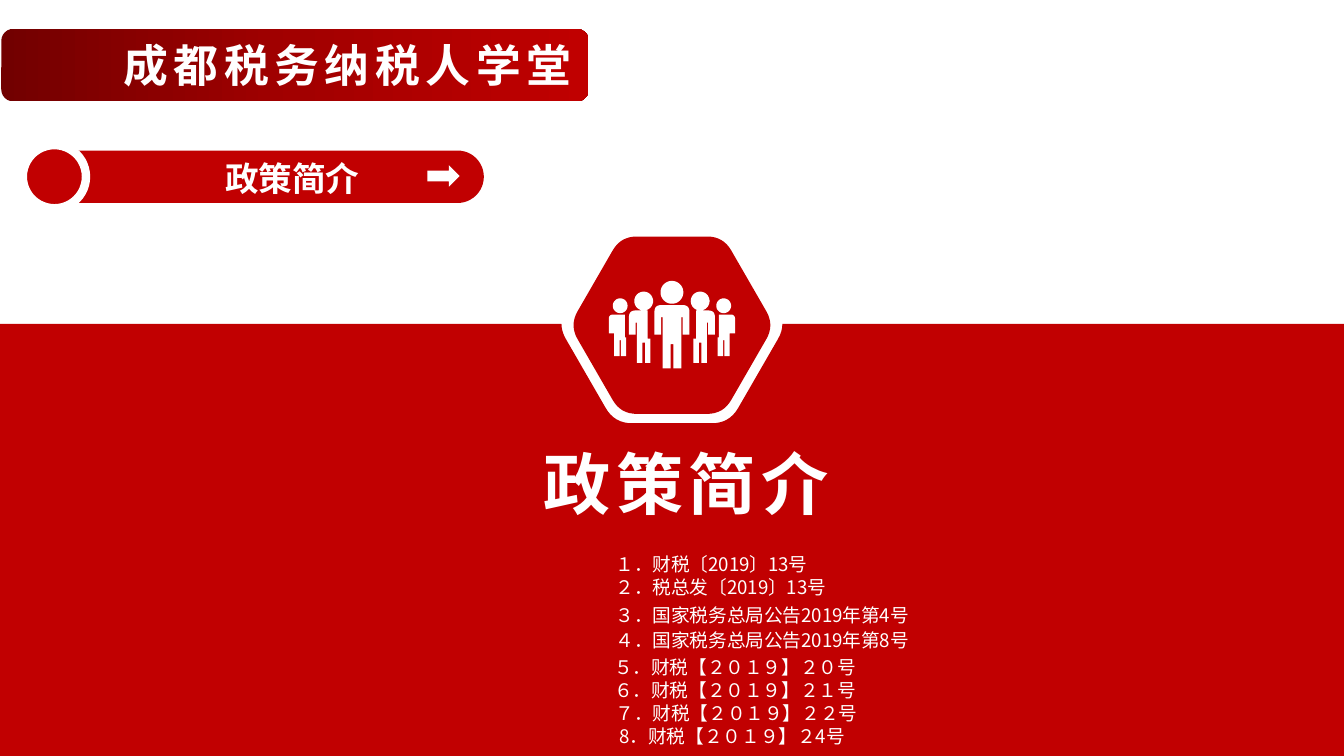
from copy import deepcopy
from dataclasses import dataclass
from math import cos, pi, sin

from lxml import etree
from pptx import Presentation
from pptx.dml.color import RGBColor
from pptx.enum.shapes import MSO_SHAPE
from pptx.enum.text import MSO_ANCHOR, PP_ALIGN
from pptx.oxml.ns import qn
from pptx.util import Inches, Pt

ROUND, OVAL, ARROW = MSO_SHAPE.ROUNDED_RECTANGLE, MSO_SHAPE.OVAL, MSO_SHAPE.RIGHT_ARROW
LEFT, CENTER = PP_ALIGN.LEFT, PP_ALIGN.CENTER
TOP, MIDDLE = MSO_ANCHOR.TOP, MSO_ANCHOR.MIDDLE

W = Inches(10)
H = W * 9 // 16
COLS = 100
ROWS = COLS * 9 / 16
CELL = W / COLS
MID = COLS / 2


@dataclass(frozen=True)
class Theme:
    red: str = "C10001"
    white: str = "FFFFFF"
    banner: tuple = ((0, "720000"), (0.5, "A20000"), (1, "C00000"))
    sans: str = "Noto Sans CJK SC"
    serif: str = "TeX Gyre Schola"
    title: int = 36
    header: int = 24
    tab: int = 18
    body: int = 10


T = Theme()

POLICIES = (
    (45.8, 41.15, "１．财税〔2019〕13号"),
    (45.8, 42.85, "２．税总发〔2019〕13号"),
    (45.8, 44.95, "３．国家税务总局公告2019年第4号"),
    (45.8, 46.8, "４．国家税务总局公告2019年第8号"),
    (45.7, 48.8, "５．财税【２０１９】２０号"),
    (45.7, 50.5, "６．财税【２０１９】２１号"),
    (45.8, 52.2, "７．财税【２０１９】２２号"),
    (46.1, 53.9, "8．财税【２０１９】２4号"),
)

LEADER_HALF = ((1.3, 22.7, 0.5), (1.3, 24.9, 0), (0.8, 24.9, 0), (0.8, 23.6, 0),
               (0.7, 23.6, 0), (0.7, 27.4, 0), (0.1, 27.4, 0), (0.1, 25.6, 0))
COLLEAGUE = ((1.8, 23.1, 0), (3.2, 23.1, 0.5), (3.2, 24.9, 0), (2.7, 24.9, 0),
             (2.7, 24, 0), (2.6, 24, 0), (2.6, 27, 0), (2.2, 27, 0), (2.2, 25.5, 0),
             (2, 25.5, 0), (2, 27, 0), (1.6, 27, 0), (1.6, 25.2, 0), (1.8, 25.2, 0))
NEIGHBOUR = ((3.5, 23.4, 0), (4.7, 23.4, 0.35), (4.7, 24.8, 0), (4.3, 24.8, 0),
             (4.3, 26.5, 0), (3.9, 26.5, 0), (3.9, 25.3, 0), (3.8, 25.3, 0),
             (3.8, 26.5, 0), (3.4, 26.5, 0), (3.4, 25.1, 0), (3.5, 25.1, 0))
HEADS = ((0, 21.75, 0.85), (2.1, 22.4, 0.7), (3.85, 22.75, 0.55))


def grid(*cells):
    return [round(c * CELL) for c in cells]


def rgb(color):
    return RGBColor.from_string(color)


def toward(a, b, dist):
    dx, dy = b[0] - a[0], b[1] - a[1]
    k = dist / (dx * dx + dy * dy) ** 0.5
    return a[0] + dx * k, a[1] + dy * k


def rounded(corners, steps=8):
    pts = []
    for i, c in enumerate(corners):
        if not c[2]:
            pts.append(c[:2])
            continue
        a = toward(c, corners[i - 1], c[2])
        b = toward(c, corners[(i + 1) % len(corners)], c[2])
        for j in range(steps + 1):
            t = j / steps
            pts.append(tuple((1 - t) ** 2 * a[n] + 2 * t * (1 - t) * c[n] + t * t * b[n]
                             for n in (0, 1)))
    return pts


def hexagon(cy, inradius, cut):
    r = inradius / cos(pi / 6)
    return rounded([(MID + r * cos(i * pi / 3), cy + r * sin(i * pi / 3), cut)
                    for i in range(6)])


def circle(cx, cy, r, n=40):
    return [(cx + r * cos(2 * pi * i / n), cy + r * sin(2 * pi * i / n)) for i in range(n)]


def paint(s, color):
    s.shadow.inherit = False
    s.line.fill.background()
    s.fill.solid()
    s.fill.fore_color.rgb = rgb(color)
    return s


def add_outline(slide, contours, color):
    paths = [[grid(*pt) for pt in c] for c in contours]
    fb = slide.shapes.build_freeform(*paths[0][0])
    for i, path in enumerate(paths):
        if i:
            fb.move_to(*path[0])
        fb.add_line_segments(path[1:], close=True)
    return paint(fb.convert_to_shape(), color)


def add_preset(slide, kind, box, color):
    return paint(slide.shapes.add_shape(kind, *grid(*box)), color)


def add_text(slide, text, box, size, font=T.sans, bold=False, align=LEFT,
             anchor=TOP, insets=(0, 0), spacing=0):
    tf = slide.shapes.add_textbox(*grid(*box)).text_frame
    tf.word_wrap = True
    tf.vertical_anchor = anchor
    tf.margin_left = tf.margin_right = Inches(insets[0])
    tf.margin_top = tf.margin_bottom = Inches(insets[1])
    p = tf.paragraphs[0]
    p.alignment = align
    r = p.add_run()
    r.text = text
    r.font.name = font
    r.font.size = Pt(size)
    r.font.bold = bold
    r.font.color.rgb = rgb(T.white)
    rpr = r.font._element
    etree.SubElement(rpr, qn("a:ea")).set("typeface", font)
    if spacing:
        rpr.set("spc", str(spacing * 100))


def add_banner(slide):
    s = add_preset(slide, ROUND, (0.1, 2.15, 43.7, 5.4), T.red)
    s.fill.gradient()
    s.fill.gradient_angle = 0
    stops = s._element.spPr.find(".//" + qn("a:gsLst"))
    stops.insert(1, deepcopy(stops[0]))
    for stop, (pos, color) in zip(s.fill.gradient_stops, T.banner):
        stop.position = pos
        stop.color.rgb = rgb(color)
    add_text(slide, "成都税务纳税人学堂", (8.2, 2.3, 54.2, 5.1), T.header,
             bold=True, insets=(0.1, 0.05), spacing=3)


def add_panel(slide):
    level = 24.1
    notch = sorted(pt for pt in hexagon(level, 7.4, 1.3) if pt[1] > level - 0.01)
    add_outline(slide, [[(0, level), *notch, (COLS, level), (COLS, ROWS), (0, ROWS)]], T.red)
    add_outline(slide, [hexagon(24.2, 6.6, 1.2)], T.red)


def add_people(slide):
    leader = [(MID + x, y, c) for x, y, c in LEADER_HALF]
    leader += [(MID - x, y, c) for x, y, c in reversed(LEADER_HALF)]
    contours = [rounded(leader), circle(MID, *HEADS[0][1:])]
    for side in (-1, 1):
        for body in (COLLEAGUE, NEIGHBOUR):
            contours.append(rounded([(MID + side * x, y, c) for x, y, c in body]))
        contours += [circle(MID + side * x, y, r) for x, y, r in HEADS[1:]]
    add_outline(slide, contours, T.white)


def add_section_tab(slide):
    add_preset(slide, ROUND, (4.1, 11.2, 31.9, 3.9), T.red).adjustments[0] = 0.5
    s = add_preset(slide, OVAL, (1.7, 10.8, 4.7, 4.7), T.red)
    s.line.color.rgb = rgb(T.white)
    s.line.width = Pt(4.5)
    add_text(slide, "政策简介", (7, 11.3, 29.5, 3.9), T.tab, font=T.serif, bold=True,
             align=CENTER, anchor=MIDDLE, insets=(0.07, 0.04))
    add_preset(slide, ARROW, (31.8, 12.3, 2.4, 1.6), T.white)


def main():
    prs = Presentation()
    prs.slide_width, prs.slide_height = W, H
    slide = prs.slides.add_slide(prs.slide_layouts[6])
    add_banner(slide)
    add_panel(slide)
    add_text(slide, "政策简介", (20, 32.5, 62.1, 6.8), T.title, bold=True,
             align=CENTER, insets=(0.07, 0.04), spacing=3)
    add_people(slide)
    add_section_tab(slide)
    for left, top, text in POLICIES:
        add_text(slide, text, (left, top, 53, 1.7), T.body)
    prs.save("out.pptx")


if __name__ == "__main__":
    main()
